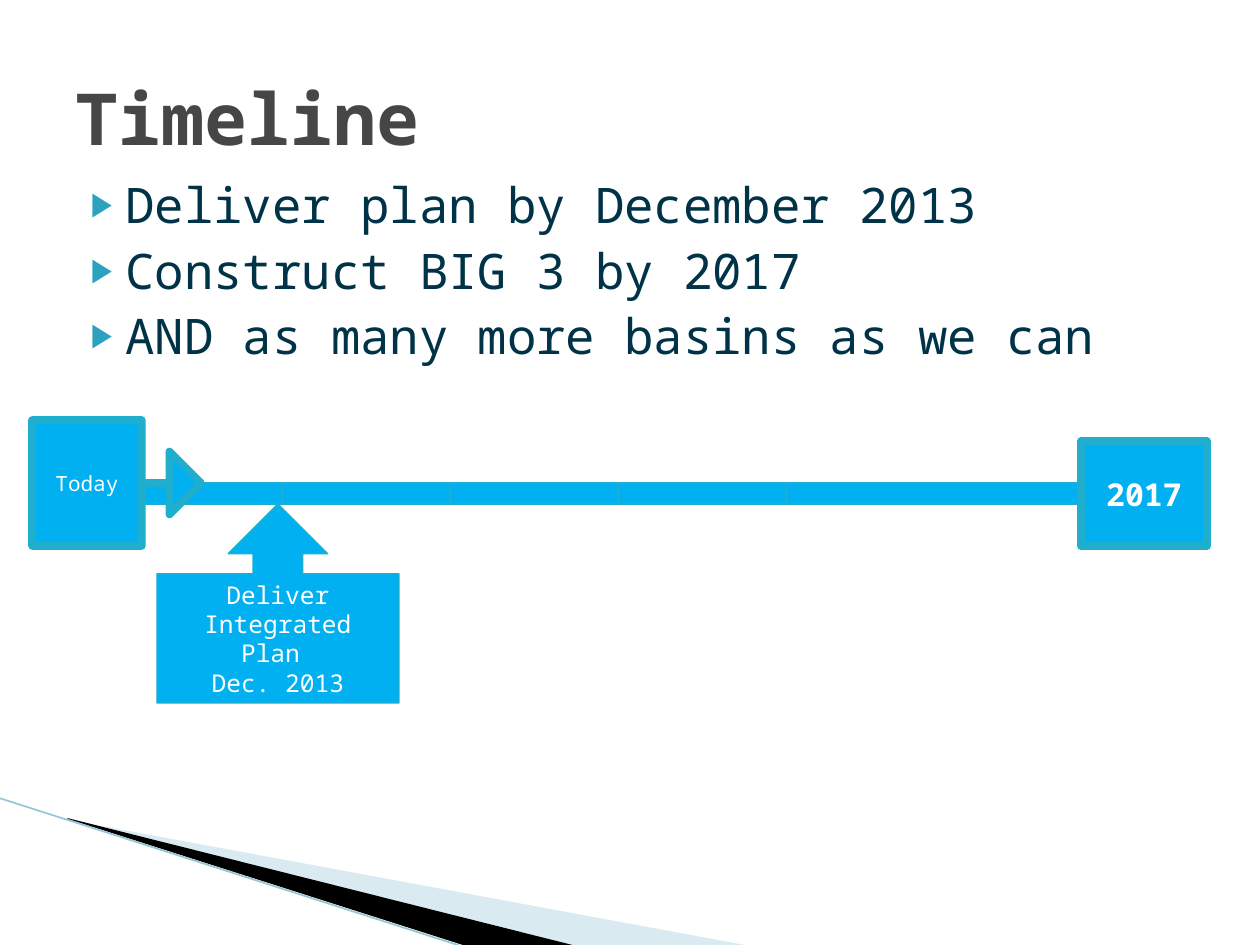
from dataclasses import dataclass

from lxml import etree
from pptx import Presentation
from pptx.dml.color import RGBColor
from pptx.enum.shapes import MSO_CONNECTOR, MSO_SHAPE
from pptx.enum.text import MSO_ANCHOR, MSO_AUTO_SIZE, PP_ALIGN
from pptx.oxml.ns import qn
from pptx.util import Emu, Pt

STRAIGHT = MSO_CONNECTOR.STRAIGHT
BAR = MSO_SHAPE.FLOWCHART_PROCESS
BOX = MSO_SHAPE.RECTANGLE
UP_CALLOUT = MSO_SHAPE.UP_ARROW_CALLOUT
RIGHT_CALLOUT = MSO_SHAPE.RIGHT_ARROW_CALLOUT
LEFT, CENTER = PP_ALIGN.LEFT, PP_ALIGN.CENTER
TOP, MIDDLE = MSO_ANCHOR.TOP, MSO_ANCHOR.MIDDLE
NO_AUTOFIT = MSO_AUTO_SIZE.NONE

PX_PER_INCH = 126


@dataclass(frozen=True)
class Theme:
    font: str = "Noto Sans Mono"
    title: str = "464646"
    body: str = "003347"
    bullet: str = "2DA2BF"
    fill: str = "00B0F0"
    outline: str = "1FAECD"
    label: str = "FFFFFF"
    wedge_pale: str = "A0CBDC"
    wedge_dark: str = "000000"
    wedge_edge: str = "97C5D8"
    title_size: int = 41
    body_size: int = 28
    year_size: int = 18
    milestone_size: int = 14
    today_size: int = 12
    thin: float = 0.75
    edge: float = 0.95
    thick: float = 4.33


THEME = Theme()


def px(value):
    return Emu(round(value * 914400 / PX_PER_INCH))


def rgb(value):
    return RGBColor.from_string(value)


def place(shape, left, top, width, height):
    shape.left, shape.top = px(left), px(top)
    shape.width, shape.height = px(width), px(height)


def add_bullet(paragraph):
    properties = paragraph._p.get_or_add_pPr()
    properties.set("marL", str(px(50)))
    properties.set("indent", str(px(-35)))
    color = etree.SubElement(properties, qn("a:buClr"))
    etree.SubElement(color, qn("a:srgbClr"), val=THEME.bullet)
    etree.SubElement(properties, qn("a:buSzPct"), val="68000")
    etree.SubElement(properties, qn("a:buChar"), char="▶")


def write_text(shape, lines, size, color, bold=False, align=CENTER,
               anchor=MIDDLE, bullets=False, gap=0):
    frame = shape.text_frame
    frame.word_wrap = True
    frame.auto_size = NO_AUTOFIT
    frame.vertical_anchor = anchor
    for index, line in enumerate(lines):
        paragraph = frame.add_paragraph() if index else frame.paragraphs[0]
        paragraph.alignment = align
        paragraph.space_before = Pt(gap if index else 0)
        if bullets:
            add_bullet(paragraph)
        run = paragraph.add_run()
        run.text = line
        run.font.name = THEME.font
        run.font.size = Pt(size)
        run.font.bold = bold
        run.font.color.rgb = rgb(color)


def add_block(slide, kind, left, top, width, height, weight=THEME.thin):
    shape = slide.shapes.add_shape(kind, px(left), px(top), px(width), px(height))
    shape.shadow.inherit = False
    shape.fill.solid()
    shape.fill.fore_color.rgb = rgb(THEME.fill)
    shape.line.color.rgb = rgb(THEME.outline)
    shape.line.width = Pt(weight)
    return shape


def add_wedge(slide, points, color, opacity=100):
    corners = [(px(x), px(y)) for x, y in points]
    builder = slide.shapes.build_freeform(*corners[0], scale=1.0)
    builder.add_line_segments(corners[1:], close=True)
    shape = builder.convert_to_shape()
    shape.shadow.inherit = False
    shape.fill.solid()
    shape.fill.fore_color.rgb = rgb(color)
    shape.line.fill.background()
    if opacity < 100:
        fill_color = shape._element.spPr.find(qn("a:solidFill")).find(qn("a:srgbClr"))
        etree.SubElement(fill_color, qn("a:alpha"), val=str(opacity * 1000))


def add_edge(slide, start, end):
    line = slide.shapes.add_connector(STRAIGHT, *map(px, start + end))
    line.line.color.rgb = rgb(THEME.wedge_edge)
    line.line.width = Pt(THEME.edge)
    etree.SubElement(line._element.spPr, qn("a:effectLst"))


def add_corner(slide):
    add_wedge(slide, [(69, 820), (750, 946), (575, 946), (69, 819)],
              THEME.wedge_pale, opacity=40)
    add_wedge(slide, [(67, 818), (576, 946), (469, 947), (68, 819)],
              THEME.wedge_dark)
    add_edge(slide, (-1, 798), (467, 948))


def add_timeline(slide):
    # Overlapping segments, one step apart
    top, height, step = 483, 21, 168
    add_block(slide, BAR, 116, top, step, height)
    for index in range(4):
        add_block(slide, BAR, 282 + index * step, top, 295, height)

    # Milestone, end year and starting point
    milestone = add_block(slide, UP_CALLOUT, 157, 504, 242, 199)
    write_text(milestone, ["Deliver Integrated Plan ", "Dec. 2013"],
               THEME.milestone_size, THEME.label)

    year = add_block(slide, BOX, 1081, 441, 126, 105, THEME.thick)
    write_text(year, ["2017"], THEME.year_size, THEME.label, bold=True)

    today = add_block(slide, RIGHT_CALLOUT, 32, 420, 169, 126, THEME.thick)
    for index, value in enumerate((0, 0.25, 0.25, 0.65)):
        today.adjustments[index] = value
    write_text(today, ["Today"], THEME.today_size, THEME.label)


def main():
    presentation = Presentation()
    presentation.slide_width, presentation.slide_height = px(1260), px(945)
    slide = presentation.slides.add_slide(presentation.slide_layouts[1])

    # Title and list
    title, body = slide.shapes.title, slide.placeholders[1]
    place(title, 63, 38, 1134, 158)
    write_text(title, ["Timeline"], THEME.title_size, THEME.title,
               bold=True, align=LEFT)
    place(body, 63, 168, 1134, 220)
    write_text(body, ["Deliver plan by December 2013",
                      "Construct BIG 3 by 2017",
                      "AND as many more basins as we can"],
               THEME.body_size, THEME.body, align=LEFT, anchor=TOP,
               bullets=True, gap=4)

    # Drawing
    add_corner(slide)
    add_timeline(slide)
    presentation.save("out.pptx")


if __name__ == "__main__":
    main()
